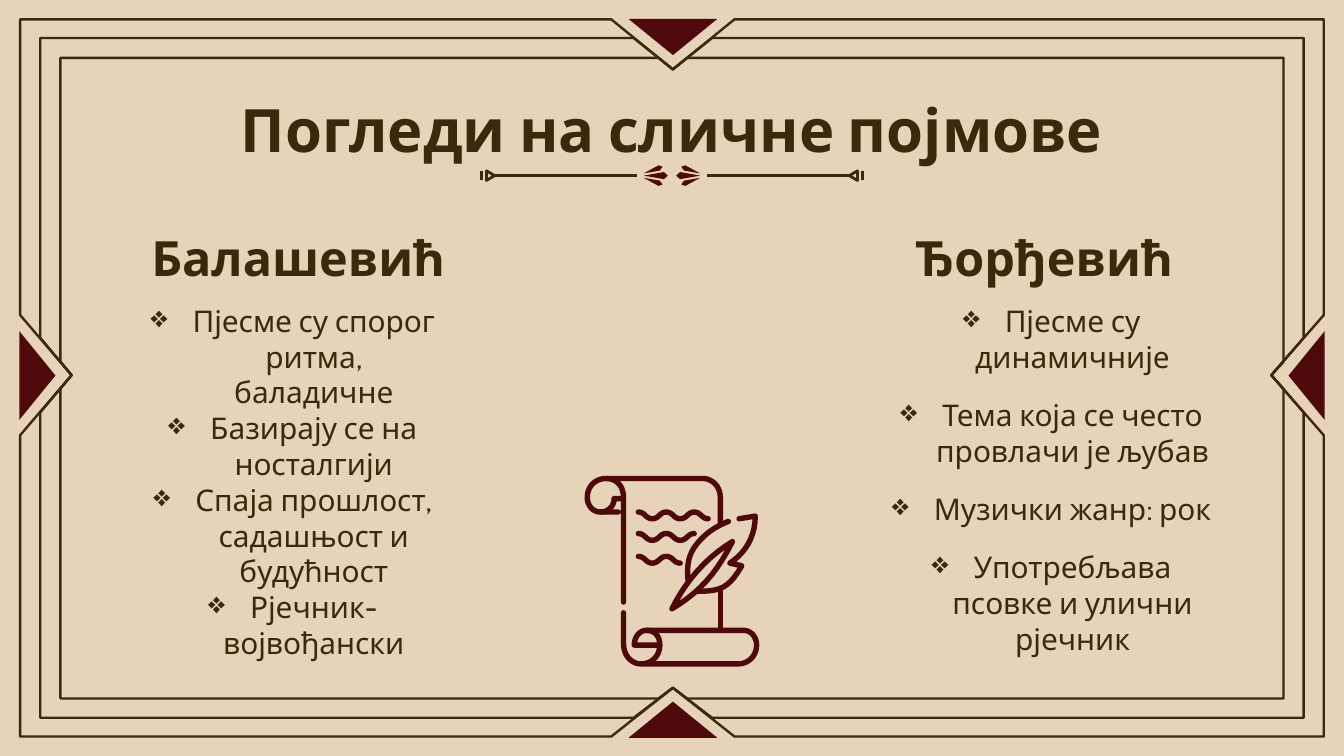
"""Build a framed slide that compares two songwriters in two bulleted columns."""
from lxml import etree
from pptx import Presentation
from pptx import util as u
from pptx.dml.color import RGBColor
from pptx.enum import shapes, text
from pptx.oxml import ns

SAND = RGBColor(0xE6, 0xD3, 0xB9)
BROWN = RGBColor(0x3B, 0x29, 0x0C)
MAROON = RGBColor(0x4E, 0x0A, 0x0A)
FONT = "Cabin"
WIDTH, HEIGHT = 720, 405
CENTER_X, CENTER_Y = 360.5, 201
NOTCH_LEFT, NOTCH_TOP, NOTCH_RIGHT, NOTCH_BOTTOM = 38.4, 37.2, 681.1, 368.5

FRAMES = [
    (10.8, 10.4, 709.2, 394.6, 33, 32.2),
    (21.6, 20.4, 698.4, 384.6, 21, 20),
    (32.4, 31, 687.6, 374.2, 7.6, 7.2),
]
GEMS = [(360.5, 19.8, 180), (360.5, 385.6, 0), (700, 201.2, 270), (20, 201.2, 90)]

ARROW = [(260.6, 91.5), (260.6, 96.7), (265, 94.1)]
MIDDLE_PETAL = [(355.7, 92.2), (344.9, 94.1), (355.7, 96), (357.8, 94.1)]
UPPER_PETAL = [(352.8, 88.6), (344.9, 92.9), (353.5, 91.4), (355, 89.3)]
LOWER_PETAL = [(x, 188.2 - y) for x, y in UPPER_PETAL]

SCROLL_X, SCROLL_Y, SCROLL_UNIT = 313.2, 254.9, 0.72
SCROLL = [
    [(25, 27), (12, 27), (6, 27, 2, 22, 2, 16), (2, 8, 8, 2, 16, 2),
     (24, 2, 29, 8, 29, 16), (29, 94)],
    [(27, 17), (22, 17), (22, 23, 17, 27, 12, 27)],
    [(16, 2), (88, 2), (95, 2, 101, 8, 101, 16), (101, 35)],
    [(101, 86), (101, 115)],
    [(29, 102), (29, 125), (29, 134, 35, 140, 42, 140), (114, 140),
     (122, 140, 128, 134, 128, 126), (128, 120, 124, 115, 118, 115), (46, 115),
     (41, 115, 37, 120, 37, 126), (56, 126), (56, 134, 50, 140, 42, 140)],
    [(46, 115), (52, 115, 56, 119, 56, 126)],
    [(65, 99), (75, 79, 90, 61, 110, 49), (98, 73, 85, 87, 65, 99)],
    [(77, 78), (76, 66, 77, 58, 85, 49), (91, 42, 99, 37, 107, 34)],
    [(115, 32), (127, 30), (127, 46, 119, 58, 108, 65), (117, 67),
     (107, 84, 101, 86, 83, 86)],
]

COLUMNS = [
    ("Балашевић", 72.7, 69.8, 174.2, 0, [
        "Пјесме су спорог ритма, баладичне",
        "Базирају се на носталгији",
        "Спаја прошлост, садашњост и будућност",
        "Рјечник- војвођански",
    ]),
    ("Ђорђевић", 472.3, 463.7, 199.4, 12, [
        "Пјесме су динамичније",
        "Тема која се често провлачи је љубав",
        "Музички жанр: рок",
        "Употребљава псовке и улични рјечник",
    ]),
]


def frame_points(left, top, right, bottom, half_width, half_height):
    x, y = CENTER_X, CENTER_Y
    return [
        (left, top), (x - half_width, top), (x, NOTCH_TOP), (x + half_width, top),
        (right, top), (right, y - half_height), (NOTCH_RIGHT, y), (right, y + half_height),
        (right, bottom), (x + half_width, bottom), (x, NOTCH_BOTTOM), (x - half_width, bottom),
        (left, bottom), (left, y + half_height), (NOTCH_LEFT, y), (left, y - half_height),
    ]


def flatten(stroke, steps=10):
    points = [stroke[0]]
    for segment in stroke[1:]:
        if len(segment) == 2:
            points.append(segment)
            continue
        knots = [points[-1], segment[:2], segment[2:4], segment[4:]]
        for step in range(1, steps + 1):
            t = step / steps
            weights = [(1 - t) ** 3, 3 * t * (1 - t) ** 2, 3 * t * t * (1 - t), t ** 3]
            points.append(tuple(sum(w * knot[axis] for w, knot in zip(weights, knots))
                                for axis in (0, 1)))
    return points


def wave(y, count):
    stroke = [(40, y)]
    for index in range(count):
        x = 40 + 10.4 * index
        start, end = (y, y + 5) if index % 2 == 0 else (y + 5, y)
        stroke.append((x + 5, start, x + 5.4, end, x + 10.4, end))
    return stroke


class Painter:
    def __init__(self, page):
        self.page = page
        fill = page.background.fill
        fill.solid()
        fill.fore_color.rgb = SAND

    def paint(self, shape, fill=None, line=None, width=1.5):
        shape.shadow.inherit = False
        if fill is None:
            shape.fill.background()
        else:
            shape.fill.solid()
            shape.fill.fore_color.rgb = fill
        if line is None:
            shape.line.fill.background()
        else:
            shape.line.color.rgb = line
            shape.line.width = u.Pt(width)

    def add_outline(self, contours, close=True, **style):
        builder = None
        for contour in contours:
            (x, y), *rest = [(u.Pt(px), u.Pt(py)) for px, py in contour]
            if builder is None:
                builder = self.page.shapes.build_freeform(x, y)
            else:
                builder.move_to(x, y)
            builder.add_line_segments(rest, close=close)
        shape = builder.convert_to_shape()
        self.paint(shape, **style)
        return shape

    def add_gem(self, x, y, rotation):
        width, height = 47.6, 19.4
        shape = self.page.shapes.add_shape(
            shapes.MSO_SHAPE.ISOSCELES_TRIANGLE, u.Pt(x - width / 2), u.Pt(y - height / 2),
            u.Pt(width), u.Pt(height))
        shape.rotation = rotation
        self.paint(shape, fill=MAROON)

    def add_rule(self, x1, y1, x2, y2):
        rule = self.page.shapes.add_connector(
            shapes.MSO_CONNECTOR.STRAIGHT, u.Pt(x1), u.Pt(y1), u.Pt(x2), u.Pt(y2))
        rule.line.color.rgb = BROWN
        rule.line.width = u.Pt(1.5)
        etree.SubElement(rule.element.spPr, ns.qn("a:effectLst"))

    def add_text(self, lines, left, top, width, height, size, bold=False, bullets=False,
                 after=0, anchor=text.MSO_ANCHOR.TOP):
        box = self.page.shapes.add_textbox(u.Pt(left), u.Pt(top), u.Pt(width), u.Pt(height))
        frame = box.text_frame
        frame.word_wrap = True
        frame.vertical_anchor = anchor
        frame.margin_left = frame.margin_right = u.Pt(7.2)
        frame.margin_top = frame.margin_bottom = u.Pt(7.2)
        frame.text = "\n".join(lines)
        for para in frame.paragraphs:
            para.alignment = text.PP_ALIGN.CENTER
            para.space_after = u.Pt(after)
            if bullets:
                self.add_bullet(para)
            para.font.name = FONT
            para.font.size = u.Pt(size)
            para.font.bold = bold
            para.font.color.rgb = BROWN

    def add_bullet(self, para):
        props = para._p.get_or_add_pPr()
        props.set("marL", str(u.Pt(22.5)))
        props.set("indent", str(-u.Pt(22.5)))
        color = etree.SubElement(props, ns.qn("a:buClr"))
        etree.SubElement(color, ns.qn("a:srgbClr"), val=str(BROWN))
        etree.SubElement(props, ns.qn("a:buChar"), char="❖")


def main():
    deck = Presentation()
    deck.slide_width, deck.slide_height = u.Pt(WIDTH), u.Pt(HEIGHT)
    painter = Painter(deck.slides.add_slide(deck.slide_layouts[6]))

    for frame in FRAMES:
        painter.add_outline([frame_points(*frame)], line=BROWN, width=1.28)
    for gem in GEMS:
        painter.add_gem(*gem)

    painter.add_text(["Погледи на сличне појмове"], 56.9, 42.5, 606.2, 45.4, 32, bold=True)
    for name, name_left, list_left, list_width, after, points in COLUMNS:
        painter.add_text([name], name_left, 115.2, 174.2, 45.4, 26, bold=True,
                         anchor=text.MSO_ANCHOR.BOTTOM)
        painter.add_text(points, list_left, 154.8, list_width, 203, 16, bullets=True, after=after)

    strokes = SCROLL + [wave(27, 5), wave(43, 4), wave(60, 3)]
    scroll = painter.add_outline(
        [[(SCROLL_X + SCROLL_UNIT * x, SCROLL_Y + SCROLL_UNIT * y) for x, y in flatten(stroke)]
         for stroke in strokes],
        close=False, line=MAROON, width=2.9)
    scroll.element.spPr.find(ns.qn("a:ln")).set("cap", "rnd")

    for mirrored in (False, True):
        def place(x):
            return WIDTH - x if mirrored else x

        painter.add_rule(place(265), 94.1, place(341.3), 94.1)
        painter.add_rule(place(257.8), 91.5, place(257.8), 96.7)
        painter.add_outline([[(place(x), y) for x, y in ARROW]], line=BROWN)
        for petal in (MIDDLE_PETAL, UPPER_PETAL, LOWER_PETAL):
            painter.add_outline([[(place(x), y) for x, y in petal]], fill=MAROON)

    deck.save("out.pptx")


if __name__ == "__main__":
    main()
